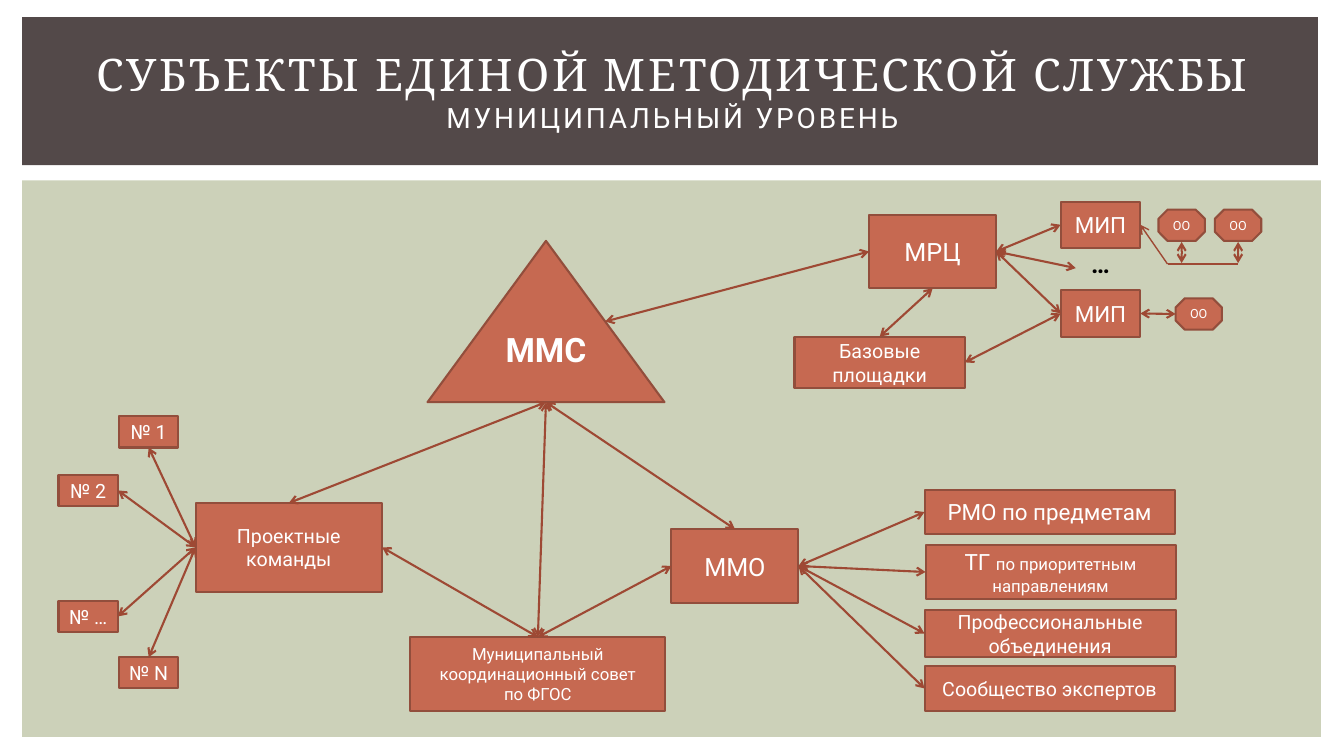
from lxml import etree
from pptx import Presentation
from pptx.dml.color import RGBColor
from pptx.enum.shapes import MSO_CONNECTOR, MSO_SHAPE
from pptx.enum.text import MSO_ANCHOR, PP_ALIGN
from pptx.oxml.ns import qn
from pptx.util import Inches, Pt

RECT, OCT, TRI = MSO_SHAPE.RECTANGLE, MSO_SHAPE.OCTAGON, MSO_SHAPE.ISOSCELES_TRIANGLE
LINE, MID, CENTER = MSO_CONNECTOR.STRAIGHT, MSO_ANCHOR.MIDDLE, PP_ALIGN.CENTER
WHITE = RGBColor(0xFF, 0xFF, 0xFF)
BLACK = RGBColor(0, 0, 0)
SAGE = RGBColor(0xCC, 0xD1, 0xB9)
BROWN = RGBColor(0x53, 0x49, 0x49)
CORAL = RGBColor(0xC6, 0x69, 0x51)
EDGE = RGBColor(0x92, 0x4E, 0x3C)
RUST = RGBColor(0x9E, 0x49, 0x34)
FONT = "Roboto"

PANELS = [((0.22, 1.79, 12.88, 5.52), SAGE), ((0.22, 0.17, 12.85, 1.47), BROWN)]
TITLE = [
    ("СУБЪЕКТЫ ЕДИНОЙ МЕТОДИЧЕСКОЙ СЛУЖБЫ", 32, "Cambria"),
    ("МУНИЦИПАЛЬНЫЙ УРОВЕНЬ", 20, FONT),
]
BOXES = {
    "mrc": ("МРЦ", 18, (8.62, 2.13, 1.26, 0.73)),
    "mip1": ("МИП", 16, (10.52, 2, 0.79, 0.46)),
    "mip2": ("МИП", 16, (10.52, 2.88, 0.79, 0.46)),
    "base": ("Базовые площадки", 14, (7.88, 3.34, 1.69, 0.51)),
    "mmo": ("ММО", 18, (6.66, 5.25, 1.26, 0.73)),
    "teams": ("Проектные команды", 14, (1.94, 4.99, 1.85, 0.88)),
    "no1": ("№ 1", 14, (1.18, 4.13, 0.59, 0.31)),
    "no2": ("№ 2", 14, (0.58, 4.71, 0.59, 0.31)),
    "more": ("№ …", 14, (0.58, 5.96, 0.59, 0.31)),
    "last": ("№ N", 14, (1.18, 6.52, 0.59, 0.31)),
    "rmo": ("РМО по предметам", 16, (9.17, 4.86, 2.48, 0.44)),
    "tg": ("ТГ ", 16, (9.18, 5.41, 2.48, 0.53)),
    "prof": ("Профессиональные объединения", 14, (9.17, 6.05, 2.49, 0.47)),
    "club": ("Сообщество экспертов", 14, (9.17, 6.61, 2.48, 0.44)),
    "board": ("Муниципальный координационный совет\nпо ФГОС", 12, (4.07, 6.32, 2.53, 0.73)),
}
TOPIC = ("по приоритетным направлениям", 12)
HUB = ("ММС", 24, (4.24, 2.39, 2.35, 1.6))
SCHOOLS = {"oo1": (11.49, 2.08), "oo2": (12.05, 2.08), "oo3": (11.66, 2.96)}
SCHOOL = ("ОО", 9, (0.46, 0.31))
DOTS = ("…", 18, (10.52, 2.46, 0.79, 0.3))

LINKS = [
    ("base", "right", "mip2", "left"),
    ("base", "top", "mrc", "bottom"),
    ("mip1", "left", "mrc", "right"),
    ("mip2", "left", "mrc", "right"),
    ("mip2", "right", "oo3", "left"),
    ("teams", "left", "no1", "bottom"),
    ("teams", "left", "no2", "right"),
    ("teams", "left", "more", "right"),
    ("teams", "left", "last", "top"),
    ("hub", "bottom", "teams", "top"),
    ("hub", "bottom", "mmo", "top"),
    ("hub", "bottom", "board", "top"),
    ("mrc", "left", "hub", "slope"),
    ("teams", "right", "board", "top"),
    ("mmo", "left", "board", "top"),
    ("rmo", "left", "mmo", "right"),
    ("tg", "left", "mmo", "right"),
    ("prof", "left", "mmo", "right"),
    ("club", "left", "mmo", "right"),
]
SIDES = {
    "left": (0, 0.5), "right": (1, 0.5), "top": (0.5, 0),
    "bottom": (0.5, 1), "slope": (0.75, 0.5),
}
DOTS_END = (10.67, 2.66)
BEND = (11.58, 2.62)

deck = Presentation()
deck.slide_width, deck.slide_height = Inches(13.33), Inches(7.5)
slide = deck.slides.add_slide(deck.slide_layouts[6])
shapes = slide.shapes
spots = {}


def style(run, size, color=WHITE, font=FONT, bold=False):
    run.font.size = Pt(size)
    run.font.name = font
    run.font.color.rgb = color
    run.font.bold = bold


def write(shape, text, size, color=WHITE, bold=False):
    frame = shape.text_frame
    frame.word_wrap = True
    frame.vertical_anchor = MID
    frame.text = text
    for par in frame.paragraphs:
        par.alignment = CENTER
        for run in par.runs:
            style(run, size, color, bold=bold)
    return frame


def block(kind, area, fill, edge=None):
    shape = shapes.add_shape(kind, *map(Inches, area))
    shape.shadow.inherit = False
    shape.fill.solid()
    shape.fill.fore_color.rgb = fill
    if edge is None:
        shape.line.fill.background()
    else:
        shape.line.color.rgb = edge
        shape.line.width = Pt(1.5)
    return shape


def node(name, kind, text, size, area, bold=False):
    spots[name] = area
    return write(block(kind, area, CORAL, EDGE), text, size, bold=bold)


def point(name, side):
    x, y, w, h = spots[name]
    dx, dy = SIDES[side]
    return x + w * dx, y + h * dy


def link(start, end, width=1.5, heads=("headEnd", "tailEnd")):
    line = shapes.add_connector(LINE, *map(Inches, (*start, *end)))
    line.line.color.rgb = RUST
    line.line.width = Pt(width)
    props = line.line._get_or_add_ln()
    for head in heads:
        etree.SubElement(props, qn("a:" + head), type="arrow")
    etree.SubElement(line._element.spPr, qn("a:effectLst"))


for area, fill in PANELS:
    block(RECT, area, fill)

title = shapes.add_textbox(*map(Inches, (0.56, 0.25, 12.22, 1.29)))
frame = write(title, "\n".join(row[0] for row in TITLE), 20)
for par, (_, size, font) in zip(frame.paragraphs, TITLE):
    for run in par.runs:
        style(run, size, font=font)
        run._r.get_or_add_rPr().set("spc", "200")

for name, (text, size, area) in BOXES.items():
    frame = node(name, RECT, text, size, area)
    if name == "tg":
        topic = frame.paragraphs[0].add_run()
        topic.text = TOPIC[0]
        style(topic, TOPIC[1])

frame = node("hub", TRI, *HUB, bold=True)
frame.margin_bottom = Inches(0.3)

text, size, extent = SCHOOL
for name, corner in SCHOOLS.items():
    frame = node(name, OCT, text, size, corner + extent)
    frame.word_wrap = False

text, size, area = DOTS
write(shapes.add_textbox(*map(Inches, area)), text, size, BLACK, True)

for one, side, two, other in LINKS:
    link(point(one, side), point(two, other))
link(DOTS_END, point("mrc", "right"))

for name in ("oo1", "oo2"):
    x, y = point(name, "bottom")
    link((x, y + 0.01), (x, BEND[1] - 0.01))
link(BEND, point("mip1", "right"), 1, ("tailEnd",))
link(BEND, (point("oo2", "bottom")[0], BEND[1]), 1, ())

deck.save("out.pptx")
